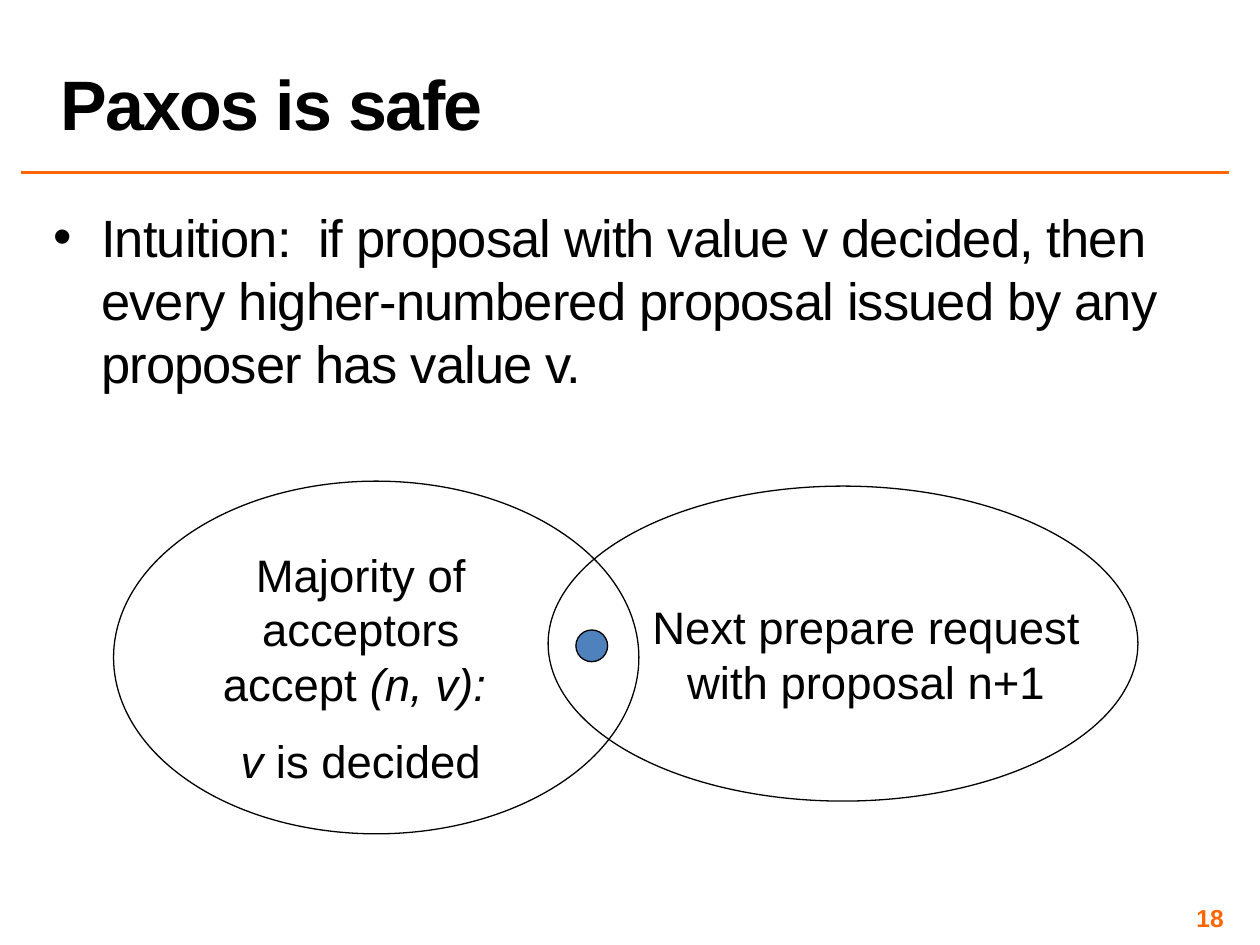
import dataclasses

import pptx
import pptx.dml.color
import pptx.enum.shapes
import pptx.enum.text
import pptx.oxml.ns
import pptx.util
from lxml import etree

Cm, Pt = pptx.util.Cm, pptx.util.Pt
ALIGN, ANCHOR = pptx.enum.text.PP_ALIGN, pptx.enum.text.MSO_ANCHOR
qn = pptx.oxml.ns.qn


@dataclasses.dataclass(frozen=True)
class Theme:
    font: str = "Arial"
    ink: str = "000000"
    accent: str = "FF6600"
    paper: str = "FFFFFF"
    dot: str = "4F81BD"
    title: int = 40
    body: int = 30
    label: int = 26
    number: int = 14
    rule: float = 2
    outline: float = 0.75


THEME = Theme()


def rgb(color):
    return pptx.dml.color.RGBColor.from_string(color)


def add_text(s, box, paragraphs, size, color=THEME.ink, bold=False, align=ALIGN.LEFT,
             anchor=ANCHOR.TOP, inset=None, tracking=None, line_spacing=None,
             before=0, after=0, bullet=None, indent=0):
    """Add a text box; each paragraph is a list of (text, italic) runs."""
    sp = s.shapes.add_textbox(*map(Cm, box))
    tf = sp.text_frame
    tf.word_wrap = True
    tf.vertical_anchor = anchor
    if inset is not None:
        tf.margin_left = tf.margin_right = tf.margin_top = tf.margin_bottom = Cm(inset)
    for i, runs in enumerate(paragraphs):
        p = tf.add_paragraph() if i else tf.paragraphs[0]
        p.alignment = align
        p.space_before, p.space_after = Pt(before), Pt(after)
        if line_spacing:
            p.line_spacing = line_spacing
        if bullet:
            pPr = p._p.get_or_add_pPr()
            pPr.set("marL", str(Cm(indent)))
            pPr.set("indent", str(-Cm(indent)))
            etree.SubElement(pPr, qn("a:buFont")).set("typeface", THEME.font)
            etree.SubElement(pPr, qn("a:buChar")).set("char", bullet)
        for text, italic in runs:
            r = p.add_run()
            r.text = text
            r.font.name, r.font.size = THEME.font, Pt(size)
            r.font.bold, r.font.italic = bold, italic
            r.font.color.rgb = rgb(color)
            if tracking:
                r._r.get_or_add_rPr().set("spc", str(int(tracking * 100)))
    return sp


def add_oval(s, box, fill=None):
    sp = s.shapes.add_shape(pptx.enum.shapes.MSO_SHAPE.OVAL, *map(Cm, box))
    sp.shadow.inherit = False
    if fill:
        sp.fill.solid()
        sp.fill.fore_color.rgb = rgb(fill)
    else:
        sp.fill.background()
    sp.line.color.rgb = rgb(THEME.ink)
    sp.line.width = Pt(THEME.outline)
    return sp


def add_header(s, box, title):
    """Place the title in the box and a rule below it that overhangs on the left."""
    x, y, w, h = box
    rule_y = y + h + 0.46
    line = s.shapes.add_connector(pptx.enum.shapes.MSO_CONNECTOR.STRAIGHT,
                                  Cm(x - 0.54), Cm(rule_y), Cm(x + w), Cm(rule_y))
    line.line.color.rgb = rgb(THEME.accent)
    line.line.width = Pt(THEME.rule)
    etree.SubElement(line._element.spPr, qn("a:effectLst"))
    add_text(s, box, [[(title, False)]], THEME.title, bold=True, anchor=ANCHOR.BOTTOM,
             tracking=-1, line_spacing=0.8)


def add_body(s, box, text):
    add_text(s, box, [[(text, False)]], THEME.body, inset=0.1, tracking=-0.5,
             before=30, after=8, bullet="•", indent=0.97)


def add_quorums(s, box):
    """Draw two overlapping quorums with a shared acceptor."""
    x, y, w, h = box

    def inside(dx, dy, width, height):
        return x + dx, y + dy, width, height

    label = dict(size=THEME.label, align=ALIGN.CENTER, before=THEME.label / 2)
    right_w = 11.89
    add_oval(s, inside(0, 0, 10.59, h), THEME.paper)
    add_text(s, inside(1.39, 1.2, 7.19, 5.26),
             [[("Majority of acceptors accept ", False), ("(n, v): ", True)],
              [("v", True), (" is decided", False)]], **label)
    add_oval(s, inside(w - right_w, 0.1, right_w, 6.35))
    add_text(s, inside(10.31, 2.26, 9.73, 2.49),
             [[("Next prepare request with proposal n+1", False)]], **label)
    add_oval(s, inside(9.32, 3, 0.64, 0.64), THEME.dot)


def add_footer(s, box, number):
    add_text(s, box, [[(str(number), False)]], THEME.number, color=THEME.accent, bold=True,
             align=ALIGN.RIGHT, anchor=ANCHOR.MIDDLE, inset=0.1)


def main():
    prs = pptx.Presentation()
    prs.slide_width, prs.slide_height = Cm(25.4), Cm(19.05)
    s = prs.slides.add_slide(prs.slide_layouts[6])
    left, width = 0.97, 23.8
    add_header(s, (left, 0.05, width, 2.97), "Paxos is safe")
    add_body(s, (left, 4.04, width, 13.92),
             "Intuition:  if proposal with value v decided, then every higher-numbered "
             "proposal issued by any proposer has value v.")
    add_quorums(s, (2.29, 9.7, 20.65, 7.11))
    add_footer(s, (18.85, 18.21, 5.92, 0.58), 18)
    prs.save("out.pptx")


if __name__ == "__main__":
    main()
